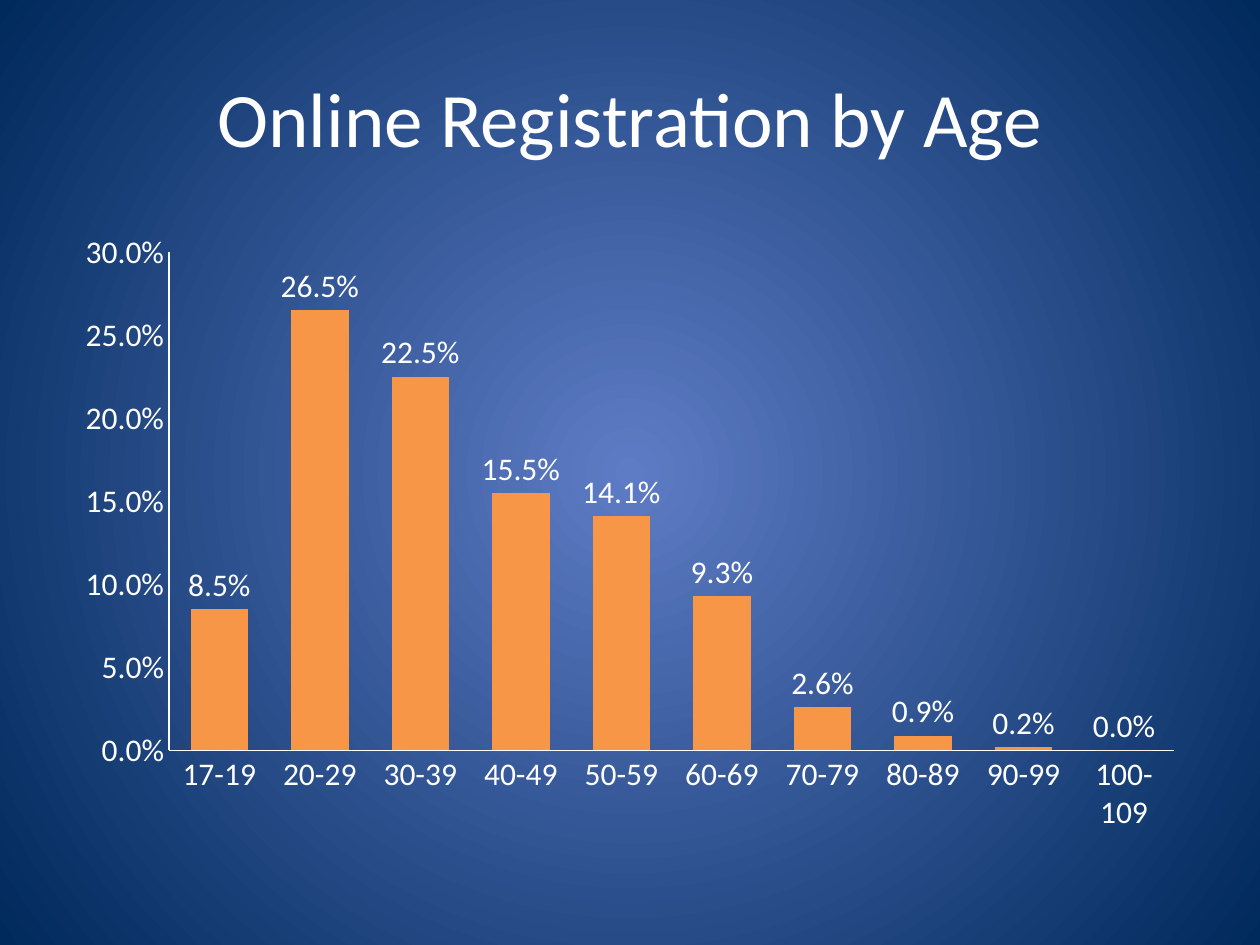
from lxml.etree import SubElement
from pptx import Presentation
from pptx.chart.data import CategoryChartData
from pptx.dml.color import RGBColor
from pptx.enum.chart import XL_CHART_TYPE as ChartType, XL_LABEL_POSITION as LabelPosition
from pptx.enum.chart import XL_TICK_MARK as TickMark
from pptx.enum.text import MSO_ANCHOR as Anchor, PP_ALIGN as Align
from pptx.oxml.ns import qn
from pptx.util import Inches, Pt

WHITE = RGBColor(0xFF, 0xFF, 0xFF)
ORANGE = RGBColor(0xF7, 0x96, 0x46)
GLOW_BLUE = RGBColor(0x5E, 0x7C, 0xC5)
DEEP_BLUE = RGBColor(0x00, 0x29, 0x5C)
FONT = "Calibri"
PERCENT = "0.0%"
AGE_SHARES = {
    "17-19": 0.085,
    "20-29": 0.265,
    "30-39": 0.225,
    "40-49": 0.155,
    "50-59": 0.141,
    "60-69": 0.093,
    "70-79": 0.026,
    "80-89": 0.009,
    "90-99": 0.002,
    "100-109": 0,
}


def style_font(font, size):
    """Apply the slide's typeface and text colour at the given point size."""
    font.name = FONT
    font.size = Pt(size)
    font.color.rgb = WHITE


def paint_background(slide):
    """Fill the background with a circular gradient from its centre."""
    fill = slide.background.fill
    fill.gradient()
    for stop, color in zip(fill.gradient_stops, (GLOW_BLUE, DEEP_BLUE)):
        stop.color.rgb = color
    gradient = slide.element.find(".//" + qn("a:gradFill"))
    gradient.remove(gradient.find(qn("a:lin")))
    circle = SubElement(gradient, qn("a:path"), path="circle")
    SubElement(circle, qn("a:fillToRect"), l="50000", t="50000", r="50000", b="50000")


def place_title(slide, text, left, top, width, height):
    """Position and format the title placeholder in the given box."""
    title = slide.shapes.title
    title.left, title.top, title.width, title.height = left, top, width, height
    frame = title.text_frame
    frame.text = text
    frame.vertical_anchor = Anchor.MIDDLE
    paragraph = frame.paragraphs[0]
    paragraph.alignment = Align.CENTER
    style_font(paragraph.font, 44)


def add_age_chart(slide, left, top, width, height):
    """Add the column chart of registration shares by age group."""
    data = CategoryChartData(number_format=PERCENT)
    data.categories = list(AGE_SHARES)
    data.add_series("Series 1", list(AGE_SHARES.values()))
    chart = slide.shapes.add_chart(
        ChartType.COLUMN_CLUSTERED, left, top, width, height, data
    ).chart
    chart.has_legend = False
    chart.has_title = False
    style_font(chart.font, 18)

    for axis in (chart.category_axis, chart.value_axis):
        axis.has_major_gridlines = False
        axis.major_tick_mark = axis.minor_tick_mark = TickMark.NONE
        axis.format.line.color.rgb = WHITE
    value_axis = chart.value_axis
    value_axis.minimum_scale = 0
    value_axis.maximum_scale = 0.3
    value_axis.major_unit = 0.05
    value_axis.tick_labels.number_format = PERCENT
    value_axis.tick_labels.number_format_is_linked = False

    plot = chart.plots[0]
    plot.gap_width = 75
    plot.vary_by_categories = False
    bars = plot.series[0].format.fill
    bars.solid()
    bars.fore_color.rgb = ORANGE
    plot.has_data_labels = True
    labels = plot.data_labels
    labels.show_value = True
    labels.position = LabelPosition.OUTSIDE_END
    labels.number_format = PERCENT
    labels.number_format_is_linked = False
    style_font(labels.font, 18)


def main():
    """Build and save the presentation."""
    presentation = Presentation()
    presentation.slide_width = Inches(10)
    presentation.slide_height = Inches(7.5)
    slide = presentation.slides.add_slide(presentation.slide_layouts[5])
    paint_background(slide)
    left, width = Inches(0.5), Inches(9)
    place_title(slide, "Online Registration by Age", left, Inches(0.3), width, Inches(1.25))
    add_age_chart(slide, left, Inches(1.75), width, Inches(4.95))
    presentation.save("out.pptx")


if __name__ == "__main__":
    main()
